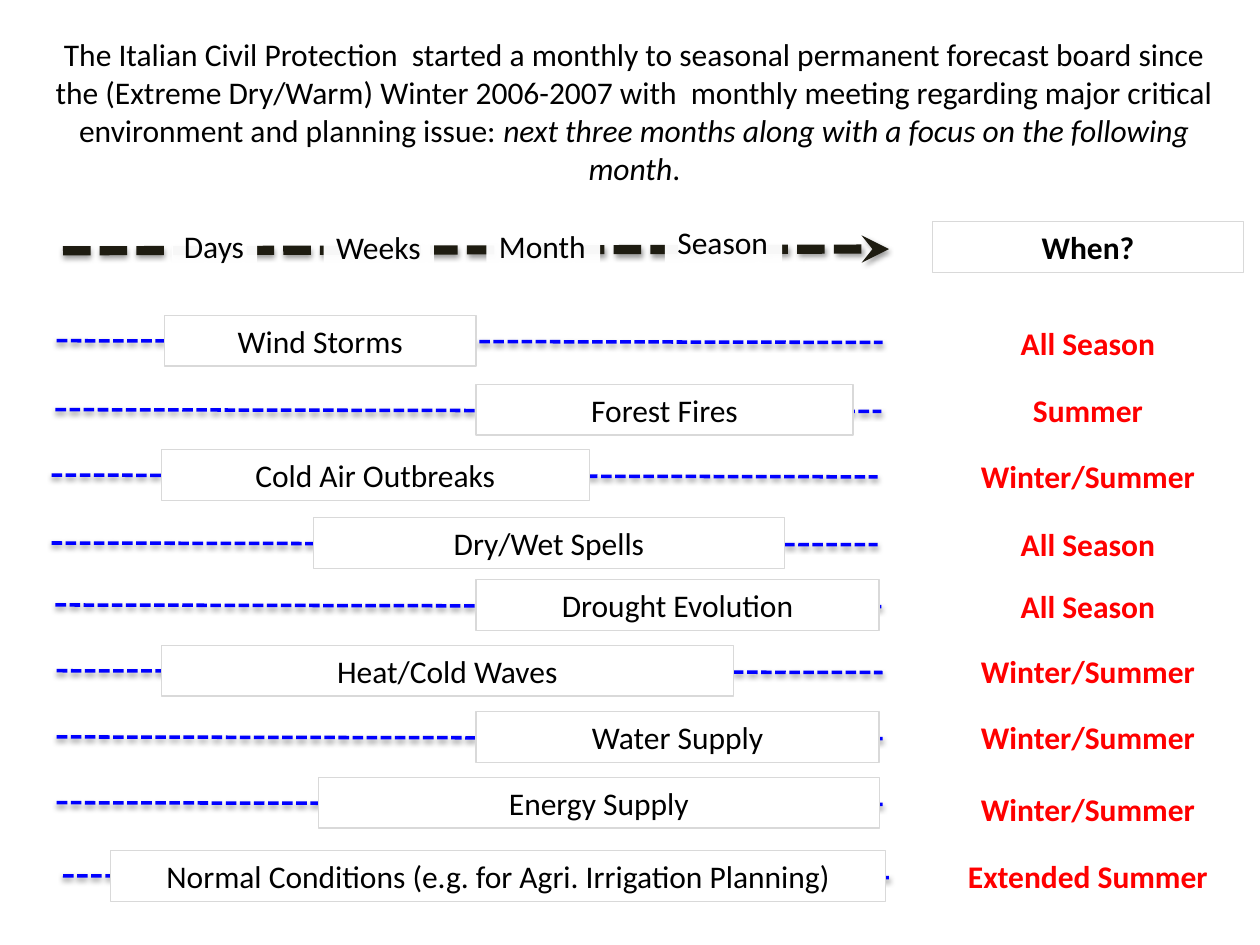
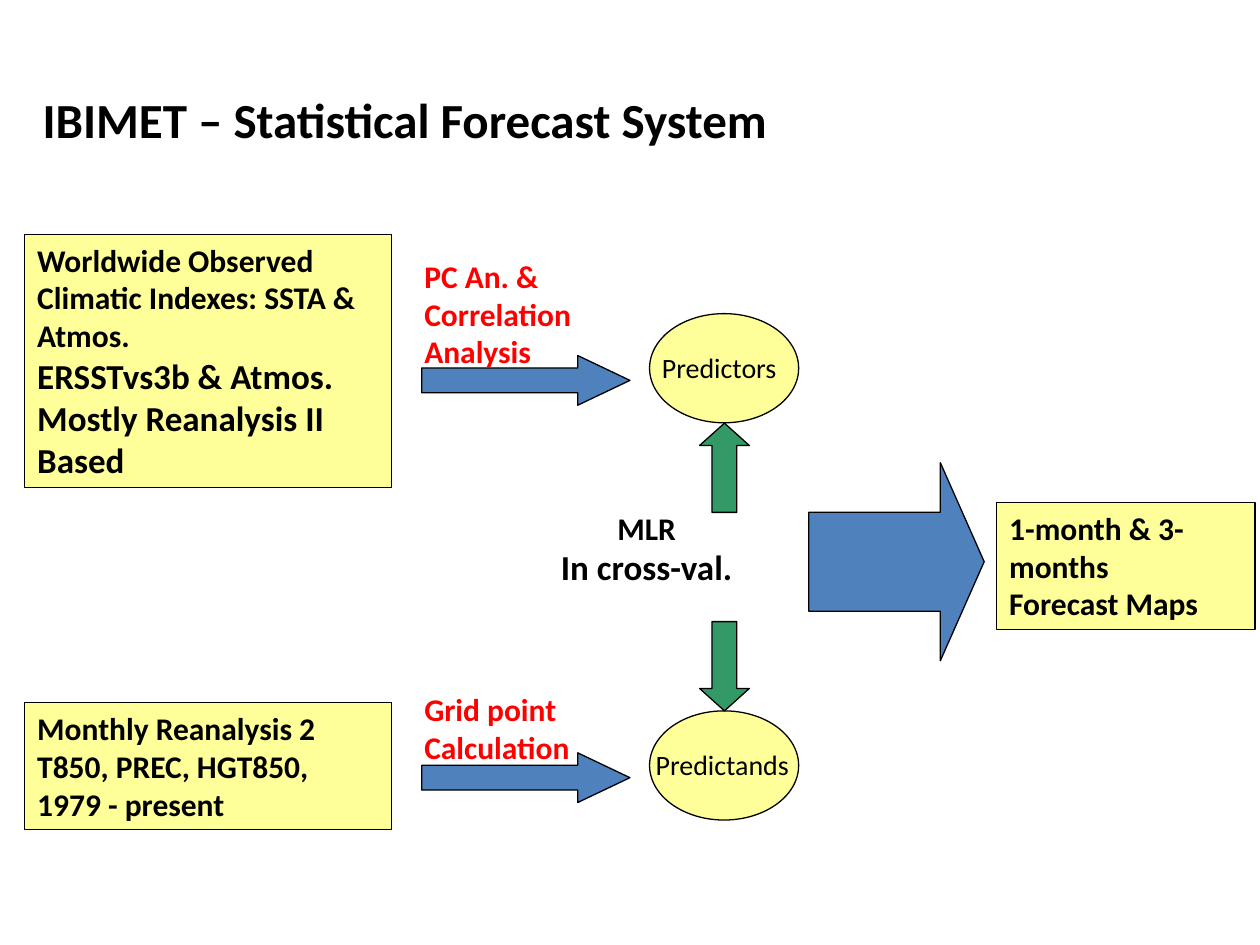
import lxml.etree
import pptx
import pptx.dml.color
import pptx.enum.dml
import pptx.enum.shapes
import pptx.enum.text
import pptx.oxml
import pptx.oxml.ns
import pptx.util

Pt = pptx.util.Pt
SHAPES = pptx.enum.shapes.MSO_SHAPE
ALIGN = pptx.enum.text.PP_ALIGN
ANCHOR = pptx.enum.text.MSO_ANCHOR
qn = pptx.oxml.ns.qn

FONT = "Calibri"
COLORS = {
    "text": "000000",
    "season": "FF0000",
    "paper": "FFFFFF",
    "border": "D9D9D9",
    "axis": "1E1C11",
    "track": "0000FF",
    "box": "FFFF99",
    "flow": "4F81BD",
    "regression": "339966",
}

INTRO = [
    "The Italian Civil Protection  started a monthly to seasonal permanent forecast board "
    "since the (Extreme Dry/Warm) Winter 2006-2007 with  monthly meeting regarding major "
    "critical environment and planning issue: ",
    "next three months along with a focus on the following month",
    ".",
]
TIME_SCALES = [
    ("Days", 62, 1.5, 49),
    ("Weeks", 149, 2.2, 63),
    ("Month", 242, 1.5, 65),
    ("Season", 344, -0.7, 67),
]
HAZARDS = [
    ("Wind Storms", 180.2, 32.4, 94.2, 177.8, "All Season", 1.3),
    ("Forest Fires", 219.6, 31.7, 272, 215.5, "Summer", 0),
    ("Cold Air Outbreaks", 257, 29.5, 92.2, 244.5, "Winter/Summer", 0.8),
    ("Dry/Wet Spells", 295.8, 29.5, 179.2, 269, "All Season", 0.8),
    ("Drought Evolution", 331.2, 31.7, 272, 230.4, "All Season", 0.8),
    ("Heat/Cold Waves", 368.8, 32.4, 92.2, 326.8, "Winter/Summer", 0),
    ("Water Supply", 406.6, 32.4, 272, 230.4, "Winter/Summer", 0),
    ("Energy Supply", 444.2, 32.4, 182, 320.4, "Winter/Summer", 3.5),
    ("Normal Conditions (e.g. for Agri. Irrigation Planning)",
     486, 36, 63.2, 443, "Extended Summer", 0),
]


def rgb(name):
    """Return the palette colour called name."""
    return pptx.dml.color.RGBColor.from_string(COLORS[name])


def format_runs(paragraph, size, color="text", bold=False):
    """Apply the deck font to every run of a paragraph."""
    for run in paragraph.runs:
        run.font.name = FONT
        run.font.size = Pt(size)
        run.font.bold = bold
        run.font.color.rgb = rgb(color)


def write(shape, text, size=18, color="text", bold=False, align=ALIGN.LEFT,
          anchor=ANCHOR.TOP, wrap=True):
    """Fill a shape with uniformly formatted text and return its frame."""
    frame = shape.text_frame
    frame.text = text
    frame.word_wrap = wrap
    frame.auto_size = pptx.enum.text.MSO_AUTO_SIZE.NONE
    frame.vertical_anchor = anchor
    for paragraph in frame.paragraphs:
        paragraph.alignment = align
        format_runs(paragraph, size, color, bold)
    return frame


def add_block(slide, kind, box, fill, line=None, adjustments=()):
    """Add a flat preset shape in the given box."""
    shape = slide.shapes.add_shape(kind, *map(Pt, box))
    shape.shadow.inherit = False
    shape.fill.solid()
    shape.fill.fore_color.rgb = rgb(fill)
    if line:
        shape.line.color.rgb = rgb(line)
        shape.line.width = Pt(0.75)
    else:
        shape.line.fill.background()
    for index, value in enumerate(adjustments):
        shape.adjustments[index] = value
    return shape


def add_label(slide, box, text, **style):
    """Add a plain text box."""
    return write(slide.shapes.add_textbox(*map(Pt, box)), text, **style)


def add_dashed_line(slide, start, end, color, width):
    """Add a dashed connector with a soft shadow below it."""
    line = slide.shapes.add_connector(
        pptx.enum.shapes.MSO_CONNECTOR.STRAIGHT, *map(Pt, (*start, *end)))
    line.line.color.rgb = rgb(color)
    line.line.width = Pt(width)
    line.line.dash_style = pptx.enum.dml.MSO_LINE.SQUARE_DOT
    effects = lxml.etree.SubElement(line.element.spPr, qn("a:effectLst"))
    shadow = lxml.etree.SubElement(
        effects, qn("a:outerShdw"), blurRad=str(Pt(3.1)), dist=str(Pt(1.6)),
        dir="5400000", rotWithShape="0")
    shade = lxml.etree.SubElement(shadow, qn("a:srgbClr"), val=COLORS["text"])
    lxml.etree.SubElement(shade, qn("a:alpha"), val="38000")
    return line


def add_title(slide, box, text, **style):
    """Move the title placeholder into the box and fill it."""
    title = slide.shapes.title
    title.left, title.top, title.width, title.height = map(Pt, box)
    return write(title, text, **style)


def add_intro(slide, box):
    """Set the introduction, its middle part in italics."""
    frame = add_title(slide, box, INTRO[0], align=ALIGN.CENTER)
    paragraph = frame.paragraphs[0]
    for text in INTRO[1:]:
        paragraph.add_run().text = text
    format_runs(paragraph, 18)
    paragraph.runs[1].font.italic = True


def add_time_axis(slide, box):
    """Draw the time arrow with its scale labels."""
    left, top, width, height = box
    middle = top + height / 2
    axis = add_dashed_line(slide, (left, middle + 0.5), (left + width, middle - 0.5), "axis", 5.25)
    outline = axis.element.spPr.find(qn("a:ln"))
    lxml.etree.SubElement(outline, qn("a:tailEnd"), type="stealth")
    for name, offset, drop, label_width in TIME_SCALES:
        label = add_block(slide, SHAPES.RECTANGLE,
                          (left + offset, top + drop, label_width, height), "paper")
        shade = label.element.spPr.find(qn("a:solidFill")).find(qn("a:srgbClr"))
        lxml.etree.SubElement(shade, qn("a:alpha"), val="97000")
        write(label, name, wrap=False)


def add_hazard_row(slide, box, name, bar_left, bar_width):
    """Draw a dashed track and the bar that covers the useful time scales."""
    left, top, width, height = box
    middle = top + height / 2
    add_dashed_line(slide, (left, middle), (left + width, middle + 1), "track", 2)
    bar = add_block(slide, SHAPES.RECTANGLE, (bar_left, top, bar_width, height), "paper", "border")
    write(bar, name, align=ALIGN.CENTER)


def add_season(slide, box, text, color="season", line=None):
    """Write one cell of the season column."""
    cell = add_block(slide, SHAPES.RECTANGLE, box, "paper", line)
    write(cell, text, color=color, bold=True, align=ALIGN.CENTER)


def build_board_slide(slide):
    """Lay out the forecast board slide."""
    row_height, season_left, season_width = 29, 532.8, 177.8
    add_intro(slide, (18, 16.6, 689, 94.4))
    add_time_axis(slide, (36, 124.6, 472, 36.4))
    add_season(slide, (season_left, 126.6, season_width, row_height), "When?", "text", "border")
    for name, top, track_left, bar_left, bar_width, season, drop in HAZARDS:
        add_hazard_row(slide, (track_left, top, 472, row_height), name, bar_left, bar_width)
        add_season(slide, (season_left, top + drop, season_width, row_height), season)


def add_data_box(slide, box, text):
    """Add a yellow box with bold text."""
    block = add_block(slide, SHAPES.RECTANGLE, box, "box", "text")
    return write(block, text, bold=True)


def add_input_flow(slide, box, method, method_rise, target, label_offset):
    """Draw a method label, its arrow and the ellipse that it leads to."""
    left, top, _, height = box
    add_block(slide, SHAPES.RIGHT_ARROW, (left, top + 24, 119, 28.4), "flow", "text", (0.5, 1.05))
    add_label(slide, (left - 5.6, top + 24 - method_rise, 130, 72), method,
              color="season", bold=True)
    add_block(slide, SHAPES.OVAL, (left + 130.2, top, 85.2, height), "box", "text")
    add_label(slide, (left + 130.2 + label_offset, top + 17.4, 100, 26.6), target, size=16)


def add_regression(slide, box):
    """Draw the regression label between its two vertical arrows."""
    left, top, width, height = box
    arrow_left, arrow_height = left + 141.8, 51
    for kind, arrow_top in ((SHAPES.UP_ARROW, top),
                            (SHAPES.DOWN_ARROW, top + height - arrow_height)):
        add_block(slide, kind, (arrow_left, arrow_top, 28.4, arrow_height),
                  "regression", "text", (0.5, 0.45))
    frame = add_label(slide, (left, top + 45.4, width, 52.6), "MLR\nIn cross-val.",
                      bold=True, align=ALIGN.CENTER)
    validation = frame.paragraphs[1]
    validation.space_before = Pt(10)
    validation.line_spacing = 0.5
    format_runs(validation, 20, bold=True)


def add_forecast(slide, box):
    """Draw the wide arrow and the resulting forecast box."""
    left, top, _, height = box
    add_block(slide, SHAPES.RIGHT_ARROW, (left, top, 100.2, height), "flow", "text", (0.5, 0.25))
    add_data_box(slide, (left + 107.4, top + 22.8, 147.6, 72.6),
                 "1-month & 3-months\nForecast Maps")


def build_system_slide(slide):
    """Lay out the statistical forecast system slide."""
    add_title(slide, (17.2, 23, 677.6, 90), "IBIMET – Statistical Forecast System",
              size=28, bold=True, anchor=ANCHOR.MIDDLE)
    indexes = add_data_box(
        slide, (14.2, 134, 209.6, 144.6),
        "Worldwide Observed Climatic Indexes: SSTA & Atmos.\n"
        "ERSSTvs3b & Atmos. Mostly Reanalysis II Based")
    format_runs(indexes.paragraphs[1], 20, bold=True)
    add_data_box(slide, (14.2, 401.6, 209.6, 72.4),
                 "Monthly Reanalysis 2 T850, PREC, HGT850, 1979 - present")
    add_input_flow(slide, (241, 179.2, 215.4, 62.4),
                   "PC An. & Correlation Analysis", 60, "Predictors", 0)
    add_input_flow(slide, (241, 406.2, 215.4, 62.4),
                   "Grid point Calculation", 39.4, "Predictands", -3.6)
    add_regression(slide, (258, 241.8, 223, 164.4))
    add_forecast(slide, (462.2, 264.4, 255, 113.2))


def main():
    """Build and save the presentation."""
    presentation = pptx.Presentation()
    presentation.slide_width, presentation.slide_height = Pt(720), Pt(540)
    for build in (build_board_slide, build_system_slide):
        build(presentation.slides.add_slide(presentation.slide_layouts[5]))
    presentation.save("out.pptx")


if __name__ == "__main__":
    main()
